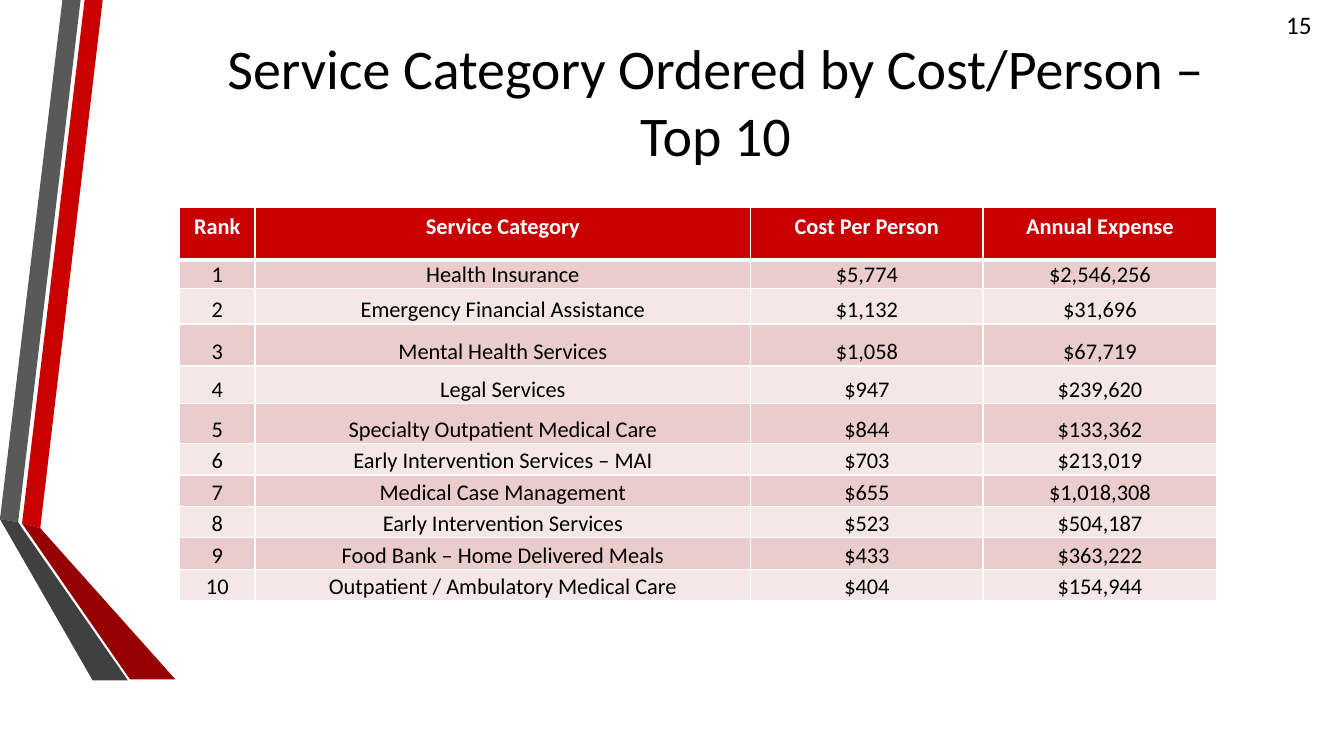
import pptx
import pptx.dml.color
import pptx.enum.text
import pptx.oxml
import pptx.oxml.ns
import pptx.util

Pt = pptx.util.Pt
ALIGN = pptx.enum.text.PP_ALIGN
ANCHOR = pptx.enum.text.MSO_ANCHOR

FONT = "Calibri"
BLACK, WHITE = "000000", "FFFFFF"
RED, DARK_RED = "C80000", "960000"
GREY, DARK_GREY = "595959", "404040"
BANDS = ("EBCCCC", "F5E7E7")

# Ribbon outlines, in points from the ribbon's top left corner
RIBBON = [
    (RED, [(15.8, 373.7), (28.8, 377.3), (73.4, 0), (60.5, 0)]),
    (GREY, [(57.6, 0), (44.6, 0), (0, 370.8), (13, 373)]),
    (DARK_RED, [(15.8, 374), (92.9, 485.3), (125.3, 485.3), (28.8, 377.3), (15.8, 373.7)]),
    (DARK_GREY, [(91.4, 486), (15.8, 377.3), (13, 373), (0, 370.8), (66.2, 486)]),
]

HEADINGS = ("Rank", "Service Category", "Cost Per Person", "Annual Expense")
SERVICES = [
    ("Health Insurance", "$5,774", "$2,546,256"),
    ("Emergency Financial Assistance", "$1,132", "$31,696"),
    ("Mental Health Services", "$1,058", "$67,719"),
    ("Legal Services", "$947", "$239,620"),
    ("Specialty Outpatient Medical Care", "$844", "$133,362"),
    ("Early Intervention Services – MAI", "$703", "$213,019"),
    ("Medical Case Management", "$655", "$1,018,308"),
    ("Early Intervention Services", "$523", "$504,187"),
    ("Food Bank – Home Delivered Meals", "$433", "$363,222"),
    ("Outpatient / Ambulatory Medical Care", "$404", "$154,944"),
]
COLUMN_WIDTHS = (54, 354, 166, 167)
ROW_HEIGHTS = (37.4, 20.5, 25.2, 30, 27, 28.4) + (22.5,) * 5


def rgb(color):
    return pptx.dml.color.RGBColor.from_string(color)


def style_text(tf, size, color, align, bold=False):
    for p in tf.paragraphs:
        p.alignment = align
        for r in p.runs:
            r.font.name = FONT
            r.font.size = Pt(size)
            r.font.bold = bold
            r.font.color.rgb = rgb(color)


def add_text(s, box, text, size, align, anchor):
    tf = s.shapes.add_textbox(*map(Pt, box)).text_frame
    tf.word_wrap = True
    tf.vertical_anchor = anchor
    tf.text = text
    style_text(tf, size, BLACK, align)


def add_ribbon(s, left, top):
    group = s.shapes.add_group_shape()
    for color, outline in RIBBON:
        points = [(Pt(left + x), Pt(top + y)) for x, y in outline]
        builder = group.shapes.build_freeform(*points[0])
        builder.add_line_segments(points[1:], close=True)
        sp = builder.convert_to_shape()
        sp.shadow.inherit = False
        sp.fill.solid()
        sp.fill.fore_color.rgb = rgb(color)
        sp.line.fill.background()


def set_borders(cell, top, bottom):
    tc_pr = cell._tc.get_or_add_tcPr()
    for side, width in (("L", 1), ("R", 1), ("T", top), ("B", bottom)):
        tc_pr.append(pptx.oxml.parse_xml(
            f'<a:ln{side} {pptx.oxml.ns.nsdecls("a")} w="{Pt(width)}">'
            f'<a:solidFill><a:srgbClr val="{WHITE}"/></a:solidFill></a:ln{side}>'))


def add_cost_table(s, left, top):
    rows = [HEADINGS] + [(str(rank), *service) for rank, service in enumerate(SERVICES, 1)]
    box = (left, top, sum(COLUMN_WIDTHS), sum(ROW_HEIGHTS))
    table = s.shapes.add_table(len(rows), len(HEADINGS), *map(Pt, box)).table
    for column, width in zip(table.columns, COLUMN_WIDTHS):
        column.width = Pt(width)
    for i, (row, height, texts) in enumerate(zip(table.rows, ROW_HEIGHTS, rows)):
        row.height = Pt(height)
        header = i == 0
        for cell, text in zip(row.cells, texts):
            cell.text = text
            style_text(cell.text_frame, 16, WHITE if header else BLACK, ALIGN.CENTER, header)
            if not header:
                cell.vertical_anchor = ANCHOR.BOTTOM
                cell.margin_left = cell.margin_right = 0
                cell.margin_top = cell.margin_bottom = 0
            # A thicker rule separates the header from the body
            set_borders(cell, 3 if i == 1 else 1, 3 if header else 1)
            cell.fill.solid()
            cell.fill.fore_color.rgb = rgb(RED if header else BANDS[(i - 1) % 2])


def main():
    prs = pptx.Presentation()
    prs.slide_width, prs.slide_height = Pt(960), Pt(540)
    s = prs.slides.add_slide(prs.slide_layouts[6])

    add_ribbon(s, 0, 0)
    # Slide number and title
    add_text(s, (911.5, 2.9, 48.5, 29), "15", 18, ALIGN.LEFT, ANCHOR.TOP)
    add_text(s, (116.6, 2.9, 789, 138.2),
             "Service Category Ordered by Cost/Person –\vTop 10", 40, ALIGN.CENTER, ANCHOR.MIDDLE)
    add_cost_table(s, 128.2, 148.3)

    prs.save("out.pptx")


if __name__ == "__main__":
    main()
